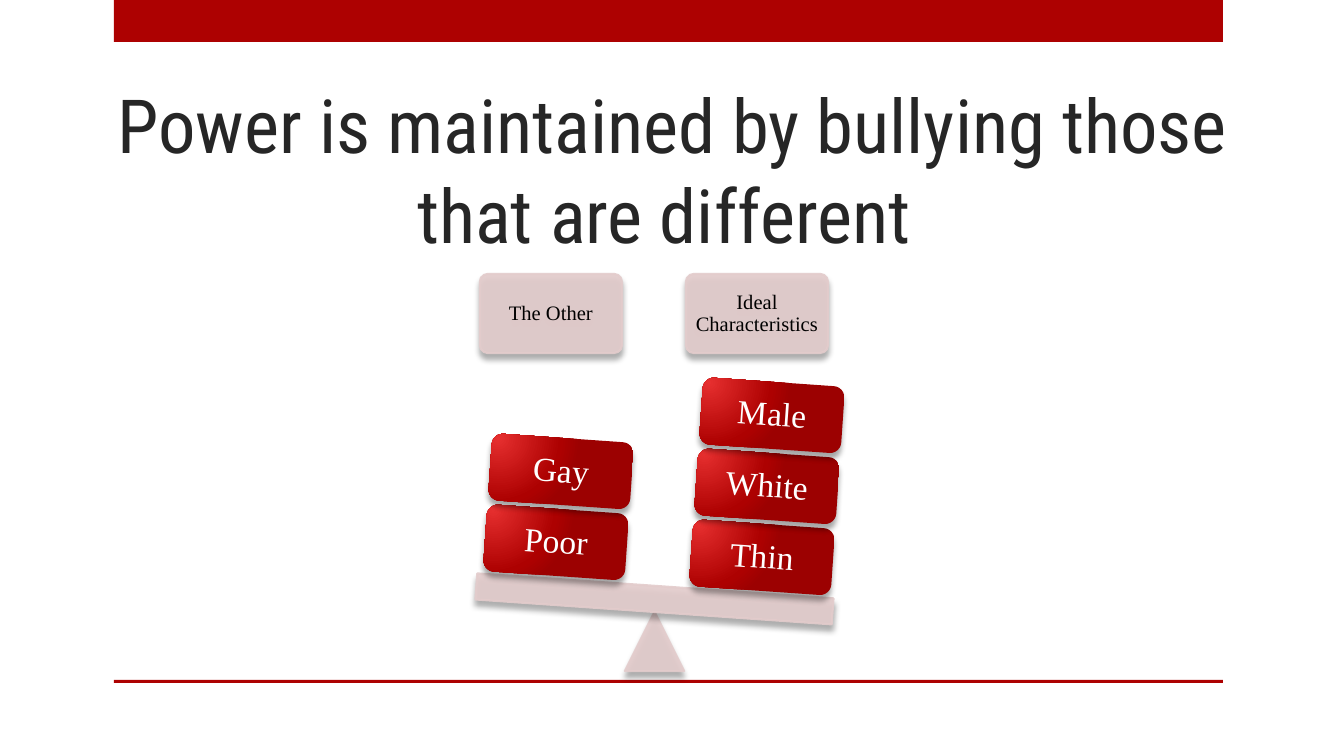
from dataclasses import dataclass

from lxml import etree
from pptx import Presentation
from pptx.dml.color import RGBColor
from pptx.enum.shapes import MSO_SHAPE
from pptx.enum.text import MSO_ANCHOR, MSO_AUTO_SIZE, PP_ALIGN
from pptx.oxml import parse_xml
from pptx.oxml.ns import nsdecls, qn
from pptx.util import Pt

RECTANGLE = MSO_SHAPE.RECTANGLE
ROUNDED = MSO_SHAPE.ROUNDED_RECTANGLE
TRIANGLE = MSO_SHAPE.ISOSCELES_TRIANGLE
CENTER = PP_ALIGN.CENTER
TOP, MIDDLE = MSO_ANCHOR.TOP, MSO_ANCHOR.MIDDLE
NO_AUTOFIT = MSO_AUTO_SIZE.NONE

EMU_PER_PX = 914400 / 134.4
TILT = 4  # degrees, shared by the plank and everything resting on it
BLOCK_SIZE = (142, 67)
BLOCK_STEP = (5, -71)  # offset from one block to the one above it


@dataclass(frozen=True)
class Theme:
    red: str = "AD0101"
    pale: str = "E3CCCC"
    title: str = "262626"
    black: str = "000000"
    white: str = "FFFFFF"
    gradient: tuple = ((0, "E62F2F"), (76, "AD0101"), (100, "9C0101"))
    title_font: str = "Roboto Condensed"
    label_font: str = "Times New Roman"
    title_size: int = 40
    header_size: int = 11
    block_size: int = 18


@dataclass(frozen=True)
class Box:
    left: int
    top: int
    width: int
    height: int


@dataclass(frozen=True)
class Stack:
    header: str
    header_left: int
    base_left: int
    base_top: int
    blocks: tuple  # from the plank upwards


THEME = Theme()
STACKS = (
    Stack("The Other", 480, 485, 509, ("Poor", "Gay")),
    Stack("Ideal Characteristics", 686, 691, 524, ("Thin", "White", "Male")),
)


def px(value: int) -> int:
    return round(value * EMU_PER_PX)


def style_text(frame, text: str, font: str, size: int, color: str,
               anchor, inset: int) -> None:
    frame.word_wrap = True
    frame.auto_size = NO_AUTOFIT
    frame.vertical_anchor = anchor
    frame.margin_left = frame.margin_right = px(inset)
    frame.margin_top = frame.margin_bottom = px(inset)
    paragraph = frame.paragraphs[0]
    paragraph.text = text
    paragraph.alignment = CENTER
    paragraph.font.name = font
    paragraph.font.size = Pt(size)
    paragraph.font.color.rgb = RGBColor.from_string(color)


def add_filled(page, kind, box: Box, color: str, rotation: int = 0):
    shape = page.shapes.add_shape(
        kind, px(box.left), px(box.top), px(box.width), px(box.height))
    shape.rotation = rotation
    shape.shadow.inherit = False
    shape.fill.solid()
    shape.fill.fore_color.rgb = RGBColor.from_string(color)
    shape.line.fill.background()
    return shape


def add_shadow(shape) -> None:
    effects = shape._element.spPr.find(qn("a:effectLst"))
    effects.append(parse_xml(
        f'<a:outerShdw {nsdecls("a")} blurRad="{Pt(3)}" dist="{Pt(3)}" '
        f'dir="5400000" rotWithShape="0"><a:srgbClr val="{THEME.black}">'
        '<a:alpha val="35000"/></a:srgbClr></a:outerShdw>'))


def add_pale(page, kind, box: Box, rotation: int = 0):
    shape = add_filled(page, kind, box, THEME.pale, rotation)
    shape.line.color.rgb = RGBColor.from_string(THEME.pale)
    shape.line.width = Pt(1.25)
    for color in shape._element.spPr.iter(qn("a:srgbClr")):
        etree.SubElement(color, qn("a:alpha"), val="90000")
    add_shadow(shape)
    return shape


def add_header(page, stack: Stack) -> None:
    shape = add_pale(page, ROUNDED, Box(stack.header_left, 274, 142, 79))
    shape.adjustments[0] = 0.1
    style_text(shape.text_frame, stack.header, THEME.label_font,
               THEME.header_size, THEME.black, MIDDLE, 6)
    shape.text_frame.paragraphs[0].line_spacing = 0.9


def add_block(page, text: str, left: int, top: int) -> None:
    shape = add_filled(page, ROUNDED, Box(left, top, *BLOCK_SIZE), THEME.red, TILT)
    stops = "".join(
        f'<a:gs pos="{position * 1000}"><a:srgbClr val="{color}"/></a:gs>'
        for position, color in THEME.gradient)
    properties = shape._element.spPr
    properties.replace(properties.find(qn("a:solidFill")), parse_xml(
        f'<a:gradFill {nsdecls("a")} rotWithShape="1"><a:gsLst>{stops}</a:gsLst>'
        '<a:path path="circle"><a:fillToRect l="15000" t="15000" '
        'r="100000" b="100000"/></a:path></a:gradFill>'))
    add_shadow(shape)
    style_text(shape.text_frame, text, THEME.label_font,
               THEME.block_size, THEME.white, MIDDLE, 9)
    shape.text_frame.paragraphs[0].line_spacing = 0.9


def main() -> None:
    deck = Presentation()
    deck.slide_width, deck.slide_height = px(1344), px(756)
    page = deck.slides.add_slide(deck.slide_layouts[5])

    # Red bars framing the page
    for box in (Box(114, 0, 1109, 42), Box(114, 680, 1109, 3)):
        add_filled(page, RECTANGLE, box, THEME.red)

    # Title
    title = page.shapes.title
    title.left, title.top, title.width, title.height = map(px, (46, 66, 1253, 85))
    style_text(title.text_frame,
               "Power is maintained by bullying those that are different ",
               THEME.title_font, THEME.title_size, THEME.title, TOP, 13)

    # Headers above the scale
    for stack in STACKS:
        add_header(page, stack)

    # Pivot and tilted plank
    add_pale(page, TRIANGLE, Box(625, 612, 59, 59))
    add_pale(page, RECTANGLE, Box(476, 586, 357, 26), TILT)

    # Blocks piled on the plank
    step_x, step_y = BLOCK_STEP
    for stack in STACKS:
        for level, text in enumerate(stack.blocks):
            add_block(page, text, stack.base_left + level * step_x,
                      stack.base_top + level * step_y)

    deck.save("out.pptx")


if __name__ == "__main__":
    main()
